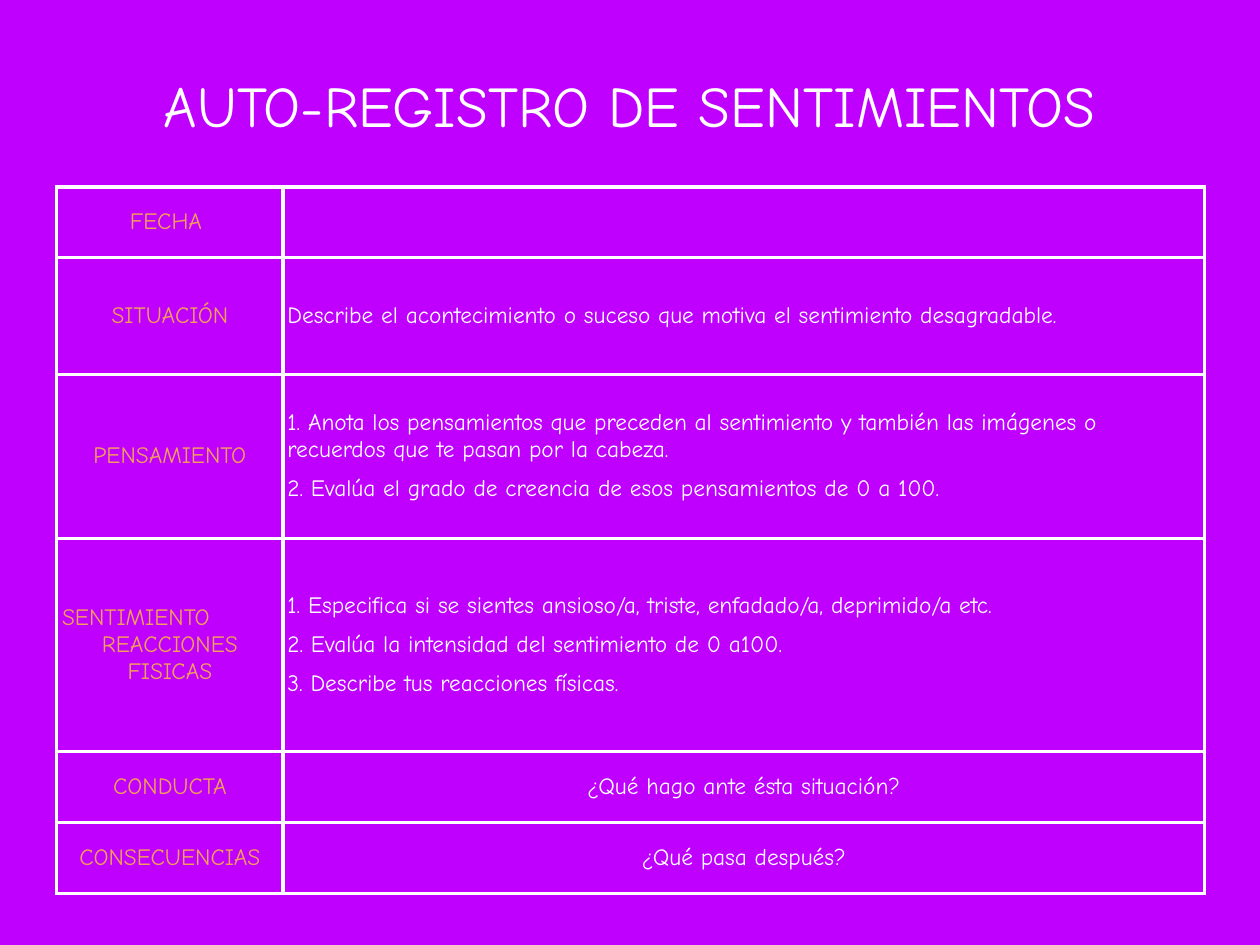
from lxml.etree import SubElement
from pptx import Presentation
from pptx.dml.color import RGBColor
from pptx.enum.text import MSO_ANCHOR, PP_ALIGN
from pptx.oxml.ns import qn
from pptx.util import Cm, Pt

COLORS = {"back": "BF00FF", "text": "FFFFFF", "label": "F2A057"}
LEFT, MID = PP_ALIGN.LEFT, PP_ALIGN.CENTER

# Each row: height in cm, label lines, label alignments, text lines, text alignment
ROWS = [
    (2.03, ["FECHA "], [MID], [], LEFT),
    (3.35, ["SITUACIÓN"], [MID],
     ["Describe el acontecimiento o suceso que motiva el sentimiento desagradable."], LEFT),
    (4.7, ["PENSAMIENTO"], [MID],
     ["1. Anota los pensamientos que preceden al sentimiento y también las imágenes o "
      "recuerdos que te pasan por la cabeza.",
      "2. Evalúa el grado de creencia de esos pensamientos de 0 a 100."], LEFT),
    (6.12, ["SENTIMIENTO", "REACCIONES FISICAS"], [LEFT, MID],
     ["1. Especifica si se sientes ansioso/a, triste, enfadado/a, deprimido/a etc.",
      "2. Evalúa la intensidad del sentimiento de 0 a100.",
      "3. Describe tus reacciones físicas."], LEFT),
    (2.03, ["CONDUCTA"], [MID], ["¿Qué hago ante ésta situación?"], MID),
    (2.03, ["CONSECUENCIAS"], [MID], ["¿Qué pasa después?"], MID),
]


class Sheet:
    """Holds the text style and the current slide."""

    font = "Comic Neue"
    size = 19
    line = 3

    def __init__(self, slide):
        self.slide = slide
        fill = slide.background.fill
        fill.solid()
        fill.fore_color.rgb = RGBColor.from_string(COLORS["back"])

    def put_text(self, frame, lines, aligns, color, size=size, gap=0):
        frame.text = "\n".join(lines)
        for i, (para, align) in enumerate(zip(frame.paragraphs, aligns)):
            para.alignment = align
            para.space_before = Pt(gap if i else 0)
            for run in para.runs:
                run.font.name = self.font
                run.font.size = Pt(size)
                run.font.bold = False
                run.font.color.rgb = RGBColor.from_string(COLORS[color])

    def title(self, text, left, top, width, height):
        box = self.slide.shapes.add_textbox(Cm(left), Cm(top), Cm(width), Cm(height))
        frame = box.text_frame
        frame.word_wrap = True
        frame.vertical_anchor = MSO_ANCHOR.MIDDLE
        self.put_text(frame, [text], [MID], "text", 46.8)

    def frame(self, cell, inset):
        """Give a cell its margins, white borders and clear fill."""
        cell.vertical_anchor = MSO_ANCHOR.MIDDLE
        cell.margin_left = cell.margin_right = Cm(inset)
        cell.margin_top = cell.margin_bottom = Cm(inset)
        props = cell._tc.get_or_add_tcPr()
        for side in ("lnL", "lnR", "lnT", "lnB"):
            edge = SubElement(props, qn(f"a:{side}"), w=str(Pt(self.line)))
            fill = SubElement(edge, qn("a:solidFill"))
            SubElement(fill, qn("a:srgbClr"), val=COLORS["text"])
        cell.fill.background()

    def table(self, rows, left, top, widths):
        heights = [row[0] for row in rows]
        table = self.slide.shapes.add_table(
            len(rows), len(widths), Cm(left), Cm(top),
            Cm(sum(widths)), Cm(sum(heights))).table
        table.first_row = table.horz_banding = False
        for col, width in zip(table.columns, widths):
            col.width = Cm(width)
        for i, (height, label, sides, lines, align) in enumerate(rows):
            table.rows[i].height = Cm(height)
            name, body = table.cell(i, 0), table.cell(i, 1)
            self.frame(name, 0.15)
            self.frame(body, 0.13)
            self.put_text(name.text_frame, label, sides, "label")
            self.put_text(body.text_frame, lines, [align] * len(lines), "text", gap=10)


def main():
    deck = Presentation()
    deck.slide_width, deck.slide_height = Cm(36.12), Cm(27.1)
    sheet = Sheet(deck.slides.add_slide(deck.slide_layouts[6]))
    sheet.title("AUTO-REGISTRO DE SENTIMIENTOS", 1.27, 0.71, 33.55, 4.55)
    sheet.table(ROWS, 1.63, 5.36, [6.48, 26.42])
    deck.save("out.pptx")


if __name__ == "__main__":
    main()
